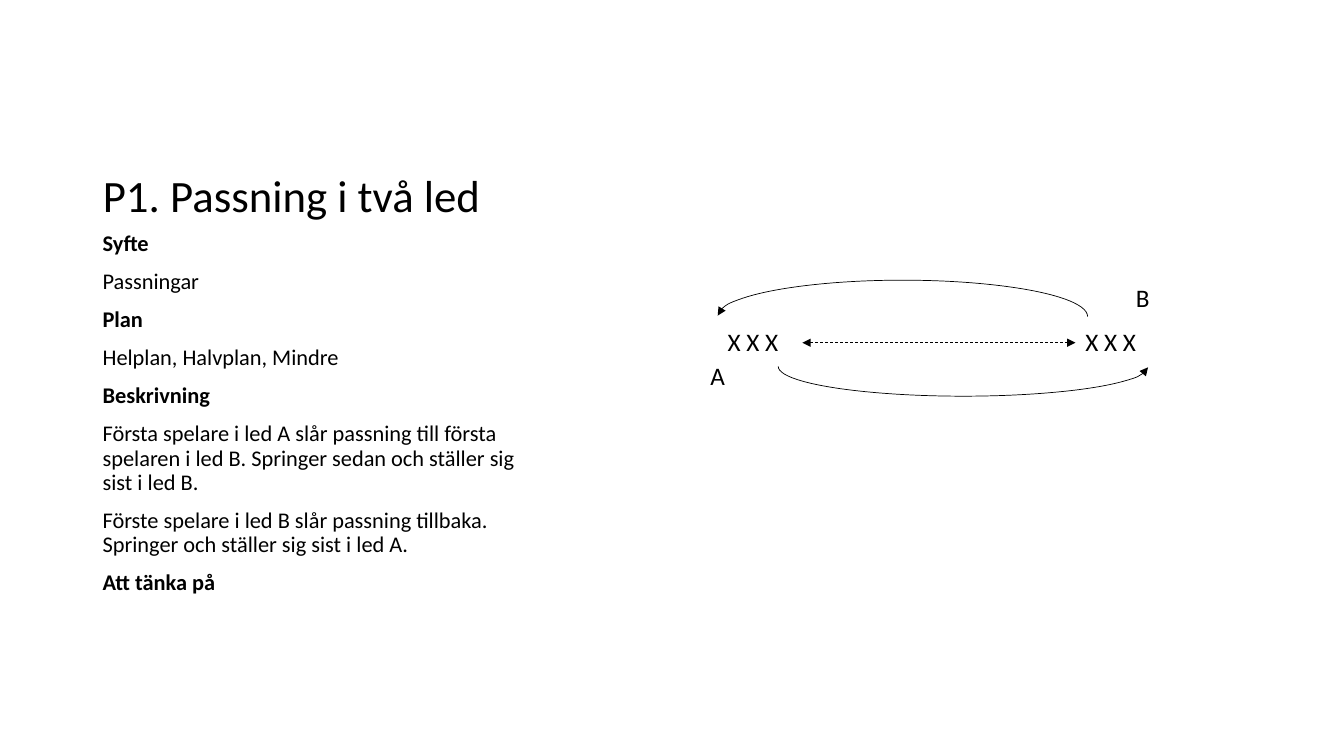
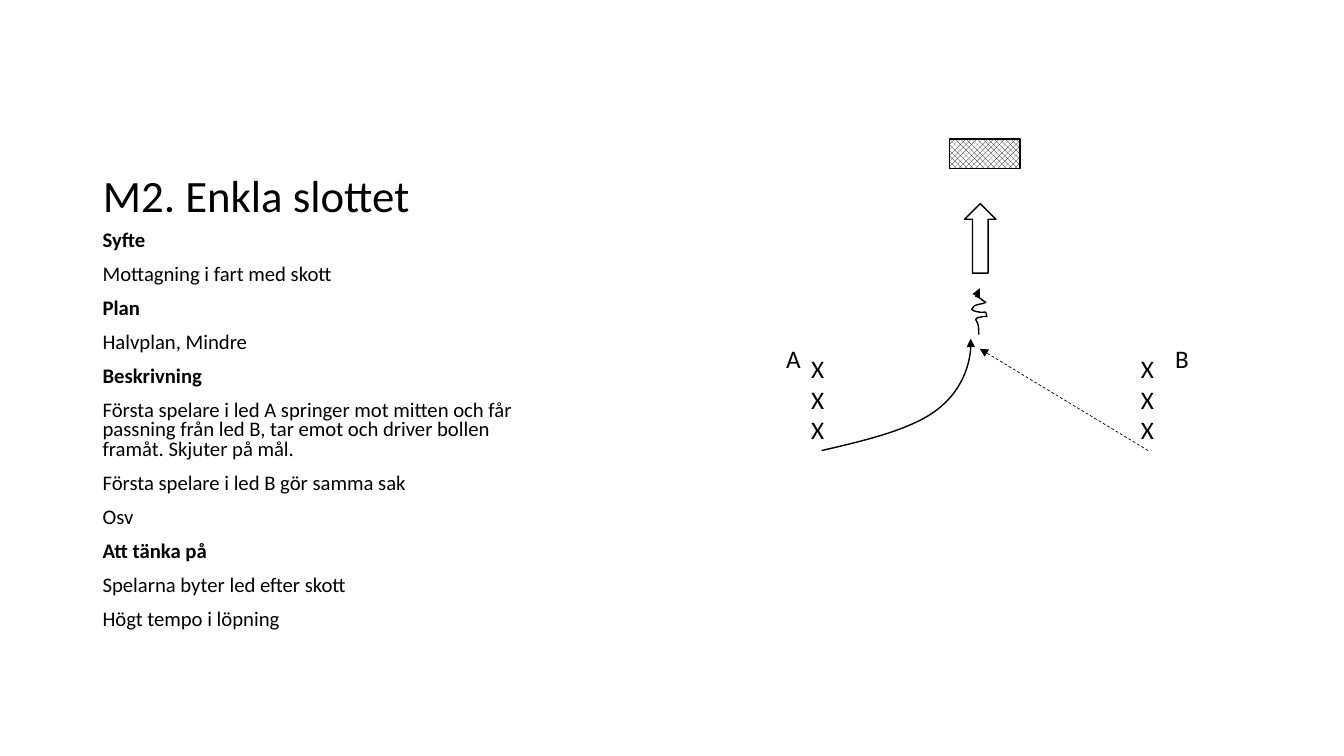
import pptx
import pptx.dml.color
import pptx.enum.dml
import pptx.enum.shapes
import pptx.enum.text
import pptx.oxml
import pptx.oxml.ns
import pptx.util
from pptx.util import Inches

SHAPES = pptx.enum.shapes.MSO_SHAPE
BLACK, WHITE = "000000", "FFFFFF"
FONT = "Calibri"
SLIDE_HEIGHT = 7.5
SLIDE_WIDTH = SLIDE_HEIGHT * 16 / 9
TEXT_LEFT, TEXT_WIDTH = 0.92, 4.3


def rgb(color):
    return pptx.dml.color.RGBColor.from_string(color)


def drawing_element(markup):
    """Parse a drawing element such as 'effectLst' with its attributes."""
    return pptx.oxml.parse_xml(f'<a:{markup} {pptx.oxml.ns.nsdecls("a")}/>')


def set_font(paragraph, size, bold=False):
    paragraph.font.name = FONT
    paragraph.font.size = pptx.util.Pt(size)
    paragraph.font.bold = bold
    paragraph.font.color.rgb = rgb(BLACK)


def add_titled_slide(prs, heading):
    slide = prs.slides.add_slide(prs.slide_layouts[5])
    title = slide.shapes.title
    title.left, title.top = Inches(TEXT_LEFT), Inches(0.5)
    title.width, title.height = Inches(TEXT_WIDTH), Inches(1.75)
    frame = title.text_frame
    frame.text = heading
    frame.word_wrap = True
    frame.auto_size = pptx.enum.text.MSO_AUTO_SIZE.NONE
    frame.vertical_anchor = pptx.enum.text.MSO_ANCHOR.BOTTOM
    paragraph = frame.paragraphs[0]
    paragraph.alignment = pptx.enum.text.PP_ALIGN.LEFT
    paragraph.line_spacing = 0.9
    set_font(paragraph, 32)
    return slide


def add_description(slide, sections, size, line_spacing):
    """Write each section as a bold heading followed by plain paragraphs."""
    box = slide.shapes.add_textbox(
        Inches(TEXT_LEFT), Inches(2.25), Inches(TEXT_WIDTH), Inches(4.17))
    frame = box.text_frame
    frame.word_wrap = True
    entries = [(text, index == 0) for section in sections
               for index, text in enumerate(section)]
    for index, (text, is_heading) in enumerate(entries):
        paragraph = frame.add_paragraph() if index else frame.paragraphs[0]
        paragraph.text = text
        paragraph.line_spacing = line_spacing
        if index:
            paragraph.space_before = pptx.util.Pt(10)
        set_font(paragraph, size, is_heading)


def add_label(slide, text, left, top, width, height=0.4):
    box = slide.shapes.add_textbox(
        Inches(left), Inches(top), Inches(width), Inches(height))
    frame = box.text_frame
    frame.word_wrap = False
    frame.auto_size = pptx.enum.text.MSO_AUTO_SIZE.SHAPE_TO_FIT_TEXT
    frame.text = text
    for paragraph in frame.paragraphs:
        set_font(paragraph, 18)


def style_line(shape, width, ends=()):
    """Draw a black line; ends may hold "headEnd" (start) and "tailEnd" (finish)."""
    shape.line.color.rgb = rgb(BLACK)
    shape.line.width = pptx.util.Pt(width)
    outline = shape.element.spPr.find(pptx.oxml.ns.qn("a:ln"))
    for end in ends:
        outline.append(drawing_element(f'{end} type="triangle"'))


def add_pass(slide, start, finish, ends):
    line = slide.shapes.add_connector(
        pptx.enum.shapes.MSO_CONNECTOR.STRAIGHT, *map(Inches, start + finish))
    line.line.dash_style = pptx.enum.dml.MSO_LINE.DASH
    style_line(line, 0.5, ends)
    line.element.spPr.append(drawing_element("effectLst"))


def add_outline(slide, kind, left, top, width, height, line_width, ends=()):
    shape = slide.shapes.add_shape(
        kind, Inches(left), Inches(top), Inches(width), Inches(height))
    shape.shadow.inherit = False
    shape.fill.background()
    style_line(shape, line_width, ends)
    return shape


def add_return_run(slide, left, top, width, height, rotation=0):
    arc = add_outline(slide, SHAPES.ARC, left, top, width, height, 0.5, ["headEnd"])
    arc.adjustments[0] = 108.16
    arc.adjustments[1] = 0
    arc.rotation = rotation


def add_run(slide, start, curves):
    """Draw a curved arrow through cubic curves (control, control, finish)."""
    builder = slide.shapes.build_freeform(*map(Inches, start))
    builder.add_line_segments(
        [tuple(map(Inches, curve[-1])) for curve in curves], close=False)
    run = builder.convert_to_shape()
    segments = list(run.element.spPr.iter(pptx.oxml.ns.qn("a:lnTo")))
    for segment, curve in zip(segments, curves):
        cubic = drawing_element("cubicBezTo")
        for x, y in curve:
            cubic.append(drawing_element(
                f'pt x="{Inches(x) - run.left}" y="{Inches(y) - run.top}"'))
        segment.getparent().replace(segment, cubic)
    run.shadow.inherit = False
    run.fill.background()
    style_line(run, 1, ["tailEnd"])


def build_passing_drill(prs):
    slide = add_titled_slide(prs, "P1. Passning i två led")
    add_description(slide, [
        ("Syfte", "Passningar"),
        ("Plan", "Helplan, Halvplan, Mindre"),
        ("Beskrivning",
         "Första spelare i led A slår passning till första spelaren i led B. "
         "Springer sedan och ställer sig sist i led B.",
         "Förste spelare i led B slår passning tillbaka. "
         "Springer och ställer sig sist i led A."),
        ("Att tänka på",),
    ], 16, 0.9)
    for queue_left in (7.12, 10.67):
        add_label(slide, "X X X", queue_left, 3.19, 0.71)
    add_pass(slide, (7.96, 3.4), (10.67, 3.4), ["headEnd", "tailEnd"])
    add_return_run(slide, 7.12, 2.78, 3.67, 0.72)
    add_return_run(slide, 7.72, 3.34, 3.67, 0.59, rotation=180)
    add_label(slide, "A", 6.95, 3.53, 0.35)
    add_label(slide, "B", 11.17, 2.75, 0.34)


def build_slot_drill(prs):
    slide = add_titled_slide(prs, "M2. Enkla slottet")
    add_description(slide, [
        ("Syfte", "Mottagning i fart med skott"),
        ("Plan", "Halvplan, Mindre"),
        ("Beskrivning",
         "Första spelare i led A springer mot mitten och får passning från "
         "led B, tar emot och driver bollen framåt. Skjuter på mål.",
         "Första spelare i led B gör samma sak",
         "Osv"),
        ("Att tänka på", "Spelarna byter led efter skott", "Högt tempo i löpning"),
    ], 14.8, 0.8)
    for queue_left in (7.95, 11.22):
        add_label(slide, "X\nX\nX", queue_left, 3.46, 0.33, 1.01)
    for name, name_left in (("A", 7.7), ("B", 11.56)):
        add_label(slide, name, name_left, 3.36, 0.35)

    goal = add_outline(slide, SHAPES.RECTANGLE, 9.42, 1.38, 0.7, 0.29, 1)
    goal.fill.patterned()
    goal.fill.pattern = pptx.enum.dml.MSO_PATTERN.OUTLINED_DIAMOND
    goal.fill.fore_color.rgb = rgb(BLACK)
    goal.fill.back_color.rgb = rgb(WHITE)

    add_run(slide, (8.15, 4.47), [
        ((8.59, 4.37), (9.04, 4.26), (9.29, 4.07)),
        ((9.53, 3.89), (9.65, 3.57), (9.63, 3.36)),
    ])
    add_pass(slide, (11.39, 4.47), (9.72, 3.46), ["tailEnd"])
    shot = add_outline(slide, SHAPES.DOWN_ARROW, 9.57, 2.02, 0.31, 0.69, 1)
    shot.rotation = 180
    shot.fill.solid()
    shot.fill.fore_color.rgb = rgb(WHITE)
    add_run(slide, (9.71, 3.32), [
        ((9.71, 3.28), (9.71, 3.24), (9.7, 3.21)),
        ((9.7, 3.19), (9.68, 3.19), (9.68, 3.17)),
        ((9.68, 3.16), (9.7, 3.15), (9.71, 3.15)),
        ((9.74, 3.14), (9.77, 3.14), (9.79, 3.14)),
        ((9.77, 3.06), (9.8, 3.12), (9.68, 3.09)),
        ((9.66, 3.09), (9.66, 3.08), (9.64, 3.07)),
        ((9.68, 3.02), (9.65, 3.04), (9.71, 3.02)),
        ((9.74, 3.02), (9.78, 3), (9.78, 3)),
        ((9.7, 2.95), (9.74, 2.96), (9.68, 2.94)),
        ((9.73, 2.87), (9.72, 2.9), (9.72, 2.86)),
    ])


def main():
    prs = pptx.Presentation()
    prs.slide_width, prs.slide_height = Inches(SLIDE_WIDTH), Inches(SLIDE_HEIGHT)
    build_passing_drill(prs)
    build_slot_drill(prs)
    prs.save("out.pptx")


if __name__ == "__main__":
    main()
